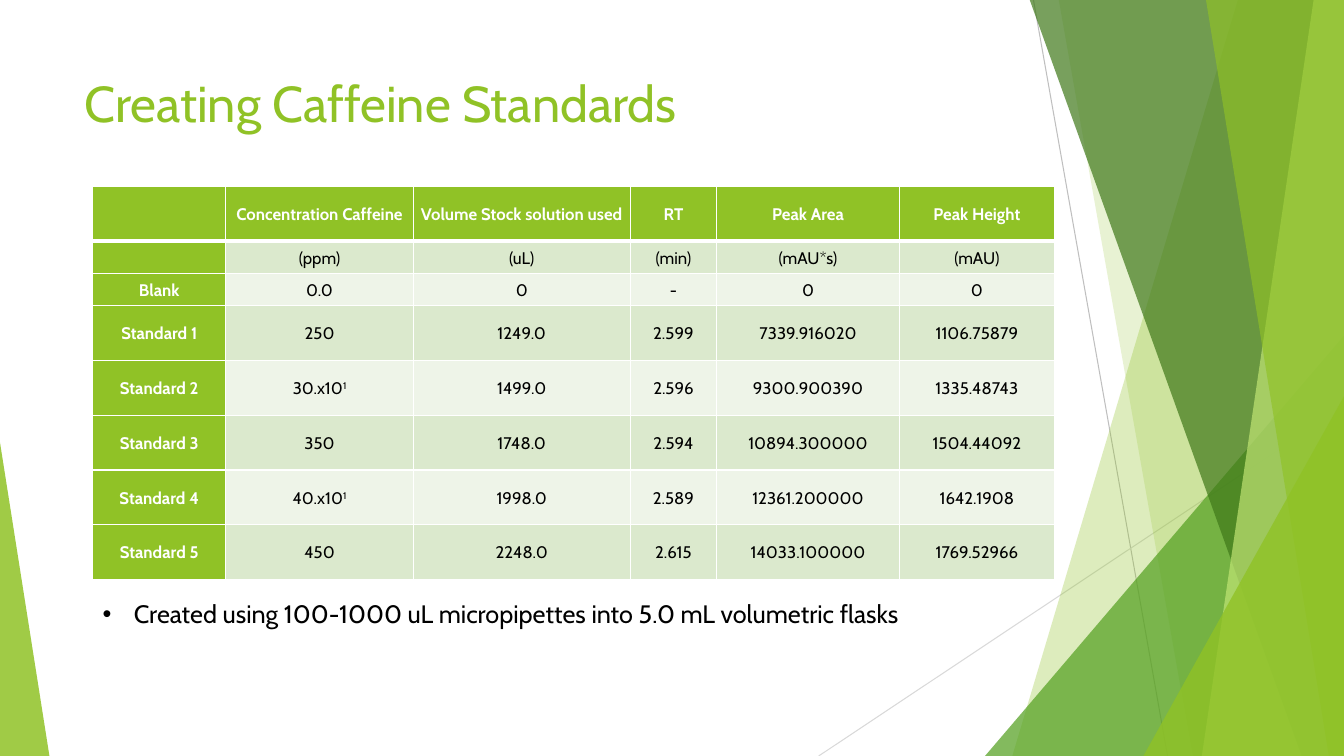
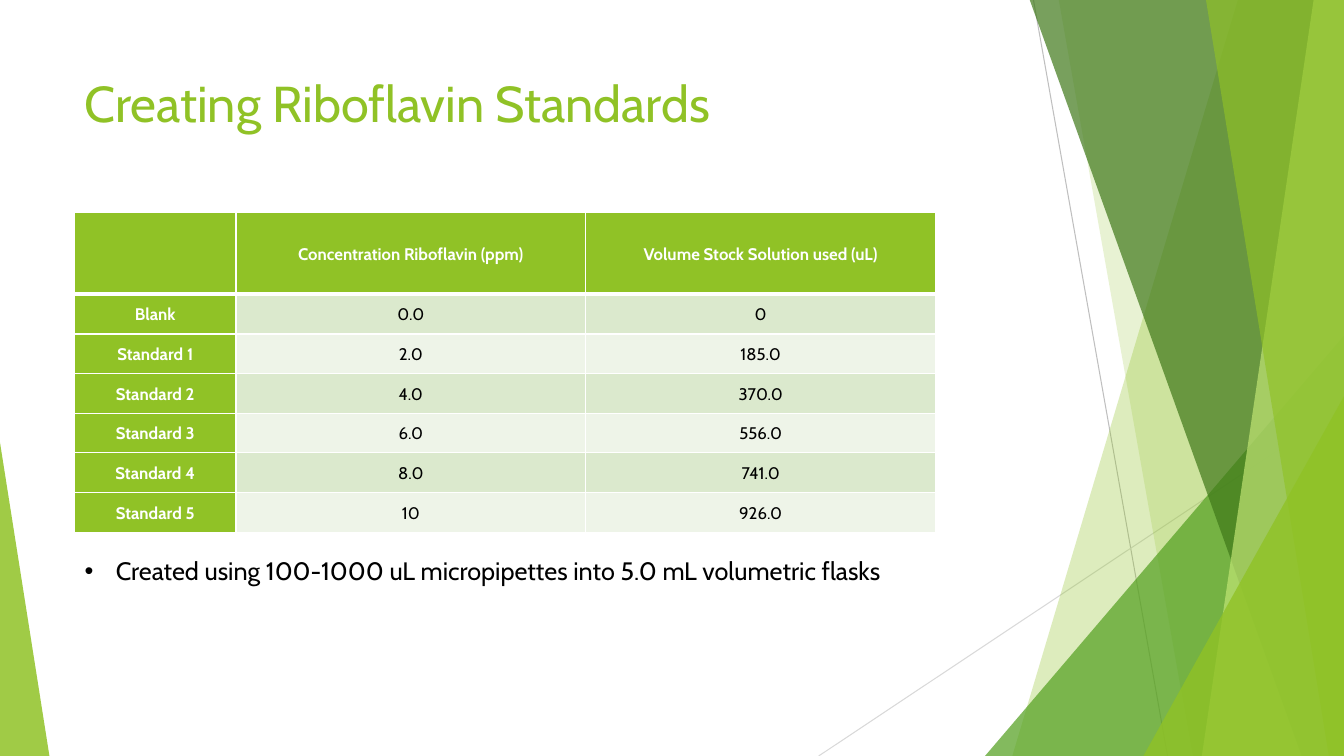
from lxml.etree import SubElement
from pptx import Presentation
from pptx.dml.color import RGBColor
from pptx.enum.shapes import MSO_CONNECTOR, MSO_SHAPE
from pptx.enum.text import MSO_ANCHOR, MSO_AUTO_SIZE, PP_ALIGN
from pptx.oxml.ns import qn
from pptx.util import Inches, Pt

WIDTH, HEIGHT = 13.33, 7.5
TOP = -0.01
GREEN, LEAF, FOREST, LIME = "90C226", "54A021", "3F7819", "C0E474"
WHITE, BLACK = "FFFFFF", "000000"
BANDS = ("DBE9CD", "EEF4E8")
FONT = "Cabin"


def color(value):
    return RGBColor.from_string(value)


def write(paragraph, text, size=12, fill=BLACK, bold=False, align=None):
    paragraph.alignment = align
    for index, part in enumerate(text.split("^")):
        run = paragraph.add_run()
        run.text = part
        run.font.name = FONT
        run.font.size = Pt(size)
        run.font.bold = bold
        run.font.color.rgb = color(fill)
        if index:
            run.font._element.set("baseline", "30000")
    if not text:
        SubElement(paragraph._p, qn("a:endParaRPr"), sz=str(size * 100))


def add_border(cell, side, width):
    properties = cell._tc.get_or_add_tcPr()
    line = SubElement(properties, qn(f"a:ln{side}"), w=str(Pt(width)))
    SubElement(SubElement(line, qn("a:solidFill")), qn("a:srgbClr"), val=WHITE)


class Deck:
    def __init__(self):
        self.presentation = Presentation()
        self.presentation.slide_width = Inches(WIDTH)
        self.presentation.slide_height = Inches(HEIGHT)
        self.slide = None

    def add_slide(self, title):
        layout = self.presentation.slide_layouts[6]
        self.slide = self.presentation.slides.add_slide(layout)
        self.backdrop()
        frame = self.text_box(0.74, 0.67, 9.4, 1.44)
        write(frame.paragraphs[0], title, size=36, fill=GREEN)

    def backdrop(self):
        self.line(10.25, 0, 11.58, HEIGHT, "BFBFBF")
        self.line(WIDTH, 4.03, 8.12, HEIGHT, "D9D9D9")
        self.band(12.28, 10.04, GREEN, 30)
        self.band(10.5, 11.83, GREEN, 20)
        self.triangle(9.77, 3.33, 3.56, 1, LEAF, 72)
        self.band(10.21, 12.91, FOREST, 70)
        self.band(13.03, 11.92, LIME, 70)
        self.band(11.96, 13.18, GREEN, 65)
        self.triangle(11.34, 3.93, 1.99, 1, GREEN, 80)
        self.triangle(0, 4.39, 0.49, 0, GREEN, 85)

    def line(self, x1, y1, x2, y2, stroke):
        connector = self.slide.shapes.add_connector(
            MSO_CONNECTOR.STRAIGHT, Inches(x1), Inches(y1), Inches(x2), Inches(y2))
        connector.line.color.rgb = color(stroke)
        connector.line.width = Pt(0.75)
        SubElement(connector._element.spPr, qn("a:effectLst"))

    def paint(self, shape, fill, opacity):
        shape.shadow.inherit = False
        shape.line.fill.background()
        shape.fill.solid()
        shape.fill.fore_color.rgb = color(fill)
        for element in shape._element.spPr.iter(qn("a:srgbClr")):
            SubElement(element, qn("a:alpha"), val=str(opacity * 1000))

    def band(self, top_x, bottom_x, fill, opacity):
        corners = [(WIDTH, TOP), (WIDTH, HEIGHT), (bottom_x, HEIGHT)]
        builder = self.slide.shapes.build_freeform(Inches(top_x), Inches(TOP))
        builder.add_line_segments([(Inches(x), Inches(y)) for x, y in corners], close=True)
        self.paint(builder.convert_to_shape(), fill, opacity)

    def triangle(self, left, top, width, apex, fill, opacity):
        shape = self.slide.shapes.add_shape(
            MSO_SHAPE.ISOSCELES_TRIANGLE,
            Inches(left), Inches(top), Inches(width), Inches(HEIGHT - top))
        shape.adjustments[0] = apex
        self.paint(shape, fill, opacity)

    def text_box(self, left, top, width, height):
        box = self.slide.shapes.add_textbox(
            Inches(left), Inches(top), Inches(width), Inches(height))
        box.text_frame.word_wrap = True
        return box.text_frame

    def bullet(self, left, top, text):
        frame = self.text_box(left, top, 8.54, 0.4)
        frame.auto_size = MSO_AUTO_SIZE.SHAPE_TO_FIT_TEXT
        paragraph = frame.paragraphs[0]
        properties = paragraph._p.get_or_add_pPr()
        properties.set("marL", str(Inches(0.31)))
        properties.set("indent", str(Inches(-0.31)))
        SubElement(properties, qn("a:buFont"), typeface="Arial")
        SubElement(properties, qn("a:buChar"), char="•")
        write(paragraph, text, size=18)

    def table(self, left, top, widths, heights, rows):
        table = self.slide.shapes.add_table(
            len(rows), len(widths), Inches(left), Inches(top),
            Inches(sum(widths)), Inches(sum(heights))).table
        table.horz_banding = False
        for column, width in zip(table.columns, widths):
            column.width = Inches(width)
        for row, height in zip(table.rows, heights):
            row.height = Inches(height)
        for row_index, row in enumerate(rows):
            for column_index, text in enumerate(row):
                self.cell(table.cell(row_index, column_index), text, row_index, column_index)

    def cell(self, cell, text, row, column):
        heading = row == 0 or column == 0
        cell.margin_left = cell.margin_right = Inches(0.07)
        cell.margin_top = cell.margin_bottom = 0
        cell.vertical_anchor = MSO_ANCHOR.MIDDLE
        add_border(cell, "L", 1)
        add_border(cell, "R", 1)
        add_border(cell, "T", 3 if row == 1 else 1)
        add_border(cell, "B", 3 if row == 0 else 1)
        cell.fill.solid()
        cell.fill.fore_color.rgb = color(GREEN if heading else BANDS[(row - 1) % 2])
        paragraph = cell.text_frame.paragraphs[0]
        paragraph.line_spacing = 1.07
        paragraph.space_after = Pt(8)
        write(paragraph, text, fill=WHITE if heading else BLACK, bold=heading,
              align=PP_ALIGN.CENTER)


CAFFEINE = [
    ("", "Concentration Caffeine", "Volume Stock solution used", "RT", "Peak Area", "Peak Height"),
    ("", "(ppm)", "(uL)", "(min)", "(mAU*s)", "(mAU)"),
    ("Blank", "0.0", "0", "-", "0", "0"),
    ("Standard 1", "250", "1249.0", "2.599", "7339.916020", "1106.75879"),
    ("Standard 2", "30.x10^1", "1499.0", "2.596", "9300.900390", "1335.48743"),
    ("Standard 3", "350", "1748.0", "2.594", "10894.300000", "1504.44092"),
    ("Standard 4", "40.x10^1", "1998.0", "2.589", "12361.200000", "1642.1908"),
    ("Standard 5", "450", "2248.0", "2.615", "14033.100000", "1769.52966"),
]
RIBOFLAVIN = [
    ("", "Concentration Riboflavin (ppm)", "Volume Stock Solution used (uL)"),
    ("Blank", "0.0", "0"),
    ("Standard 1", "2.0", "185.0"),
    ("Standard 2", "4.0", "370.0"),
    ("Standard 3", "6.0", "556.0"),
    ("Standard 4", "8.0", "741.0"),
    ("Standard 5", "10", "926.0"),
]
METHOD = "Created using 100-1000 uL micropipettes into 5.0 mL volumetric flasks"


def main():
    deck = Deck()

    deck.add_slide("Creating Caffeine Standards")
    short = 0.32
    tall = (3.9 - 2 * short) / 6
    deck.table(0.92, 1.85, [1.32, 1.86, 2.15, 0.86, 1.81, 1.54],
               [tall, short, short] + [tall] * 5, CAFFEINE)
    deck.bullet(0.92, 5.89, METHOD)

    deck.add_slide("Creating Riboflavin Standards")
    header = 0.81
    deck.table(0.74, 2.11, [1.6, 3.47, 3.47],
               [header] + [(3.17 - header) / 6] * 6, RIBOFLAVIN)
    deck.bullet(0.74, 5.46, METHOD)

    deck.presentation.save("out.pptx")


if __name__ == "__main__":
    main()
